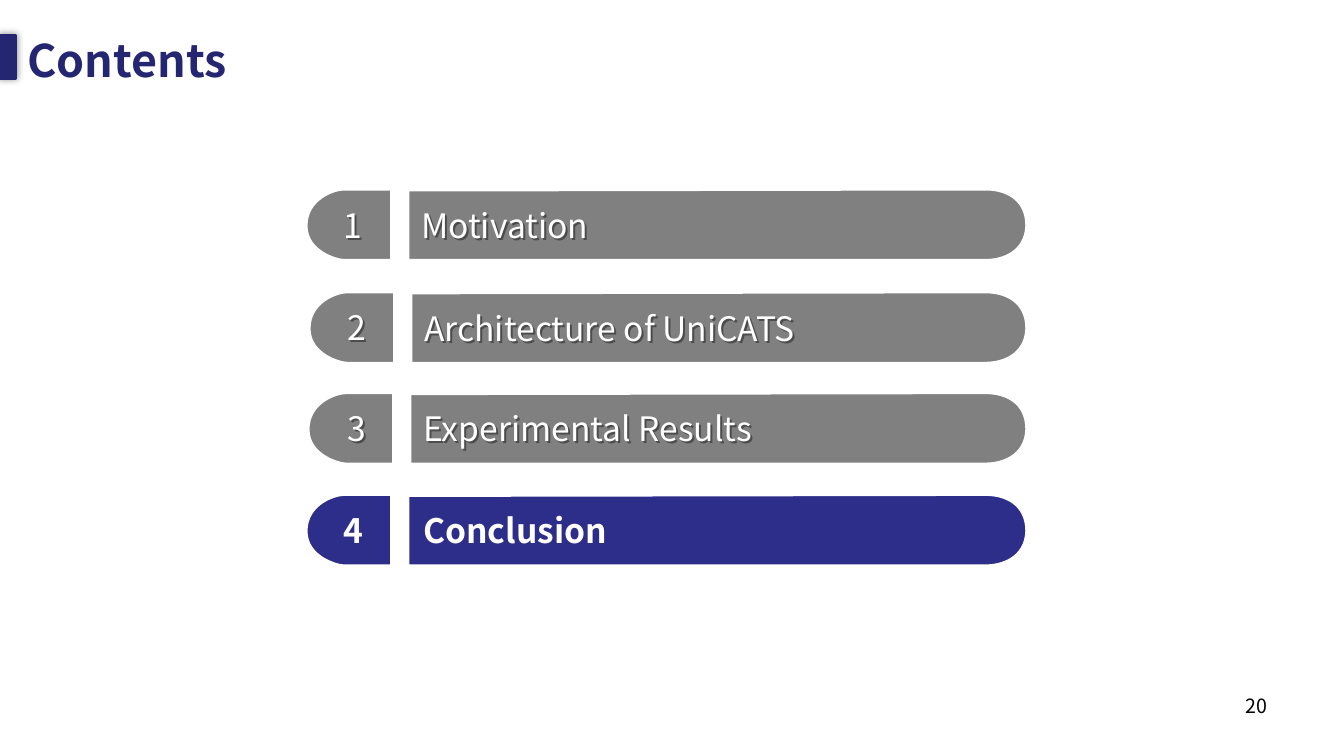
from lxml import etree
from pptx import Presentation
from pptx.dml.color import RGBColor
from pptx.enum.shapes import MSO_SHAPE as Preset
from pptx.enum.text import MSO_ANCHOR as Anchor, PP_ALIGN as Align
from pptx.oxml.ns import qn
from pptx.util import Inches, Pt

TITLE = "Contents"
PAGE_NUMBER = "20"
# label, row top, then the left edges of cap, number, bar and label
SECTIONS = [
    ("Motivation", 1.88, 3.04, 3.29, 4.05, 4.08),
    ("Architecture of UniCATS", 2.9, 3.07, 3.33, 4.08, 4.11),
    ("Experimental Results", 3.9, 3.06, 3.33, 4.07, 4.1),
    ("Conclusion", 4.91, 3.04, 3.29, 4.05, 4.1),
]
CURRENT = "Conclusion"
COLORS = {"navy": "242671", "current": "2D2D8A", "other": "808080",
          "white": "FFFFFF", "black": "000000"}
FONT = "Noto Sans CJK SC"
BAR_RIGHT, ROW_HEIGHT = 10.18, 0.7


def color(name):
    return RGBColor.from_string(COLORS[name])


def add_shadow(shape, blur, distance, angle, alpha):
    shape.shadow.inherit = False
    effects = shape._element.spPr.find(qn("a:effectLst"))
    shadow = etree.SubElement(effects, qn("a:outerShdw"), blurRad=str(Pt(blur)),
                              dist=str(Pt(distance)), dir=str(angle * 60000))
    black = etree.SubElement(shadow, qn("a:srgbClr"), val=COLORS["black"])
    etree.SubElement(black, qn("a:alpha"), val=str(alpha * 1000))


def add_text(shapes, text, box, size, ink, bold=False, align=Align.LEFT,
             anchor=Anchor.TOP, inset=0.05):
    text_box = shapes.add_textbox(*map(Inches, box))
    frame = text_box.text_frame
    frame.text = text
    frame.word_wrap = True
    frame.vertical_anchor = anchor
    frame.margin_top = frame.margin_bottom = Inches(inset)
    paragraph = frame.paragraphs[0]
    paragraph.alignment = align
    font = paragraph.runs[0].font
    font.size, font.bold, font.name = Pt(size), bold, FONT
    font.color.rgb = color(ink)
    latin = font._element.find(qn("a:latin"))
    latin.addnext(etree.Element(qn("a:ea"), typeface=FONT))
    return text_box


def cap_outline(left, top):
    """Return the start and the segments; three points make a curve."""
    right, bottom = left + 0.84, top + ROW_HEIGHT
    return (right, top), [
        [(right, bottom)],
        [(left + 0.37, bottom)],
        [(left + 0.31, bottom), (left, top + 0.62), (left, top + 0.36)],
        [(left, top + 0.09), (left + 0.28, top), (left + 0.37, top)],
    ]


def bar_outline(left, top):
    """Return the start and the segments; three points make a curve."""
    right, bottom = BAR_RIGHT, top + ROW_HEIGHT
    return (left, top + 0.01), [
        [(left, bottom)],
        [(left + 0.2, bottom), (right - 0.56, bottom), (right - 0.4, bottom)],
        [(right - 0.25, bottom), (right - 0.01, top + 0.63), (right, top + 0.36)],
        [(right, top + 0.09), (right - 0.21, top), (right - 0.4, top)],
        [(right - 0.59, top), (left + 0.2, top + 0.01), (left, top + 0.01)],
    ]


def add_outline(shapes, outline, fill):
    start, segments = outline
    ends = [segment[-1] for segment in segments]
    builder = shapes.build_freeform(*map(Inches, start))
    builder.add_line_segments([tuple(map(Inches, end)) for end in ends], close=True)
    shape = builder.convert_to_shape()
    left = min(x for x, y in [start] + ends)
    top = min(y for x, y in [start] + ends)
    lines = list(shape._element.iter(qn("a:lnTo")))
    for line, segment in zip(lines, segments):
        if len(segment) == 3:
            bend = etree.Element(qn("a:cubicBezTo"))
            for x, y in segment:
                etree.SubElement(bend, qn("a:pt"), x=str(Inches(x - left)),
                                 y=str(Inches(y - top)))
            line.getparent().replace(line, bend)
    shape.shadow.inherit = False
    shape.fill.solid()
    shape.fill.fore_color.rgb = color(fill)
    shape.line.color.rgb = color("white")
    shape.line.width = Pt(1.5)


def add_section(slide, number, label, top, cap_left, number_left, bar_left, label_left):
    shapes = slide.shapes.add_group_shape().shapes
    current = label == CURRENT
    fill = "current" if current else "other"
    add_outline(shapes, bar_outline(bar_left, top), fill)
    add_outline(shapes, cap_outline(cap_left, top), fill)
    texts = [
        add_text(shapes, str(number), (number_left, top + 0.1, 0.42, 0.5),
                 24, "white", current, Align.CENTER),
        add_text(shapes, label, (label_left, top + 0.12, 5.85, 0.46),
                 24, "white", current, anchor=Anchor.MIDDLE, inset=0.03),
    ]
    if not current:
        for text_box in texts:
            add_shadow(text_box, 0, 2, 45, 40)


def add_title_marker(slide):
    marker = slide.shapes.add_shape(
        Preset.RECTANGLE, *map(Inches, (-0.01, 0.35, 0.17, 0.43)))
    marker.fill.solid()
    marker.fill.fore_color.rgb = color("navy")
    marker.line.color.rgb = color("navy")
    marker.line.width = Pt(2)
    add_shadow(marker, 5, 0, 0, 40)


def main():
    presentation = Presentation()
    presentation.slide_width = Inches(13.33)
    presentation.slide_height = Inches(7.5)
    slide = presentation.slides.add_slide(presentation.slide_layouts[6])
    add_title_marker(slide)
    add_text(slide.shapes, PAGE_NUMBER, (9.56, 6.83, 3.11, 0.52), 14, "black",
             align=Align.RIGHT)
    for number, section in enumerate(SECTIONS, start=1):
        add_section(slide, number, *section)
    add_text(slide.shapes, TITLE, (0.17, -0.13, 12.95, 1.45), 32, "navy", True,
             anchor=Anchor.MIDDLE)
    presentation.save("out.pptx")


if __name__ == "__main__":
    main()
